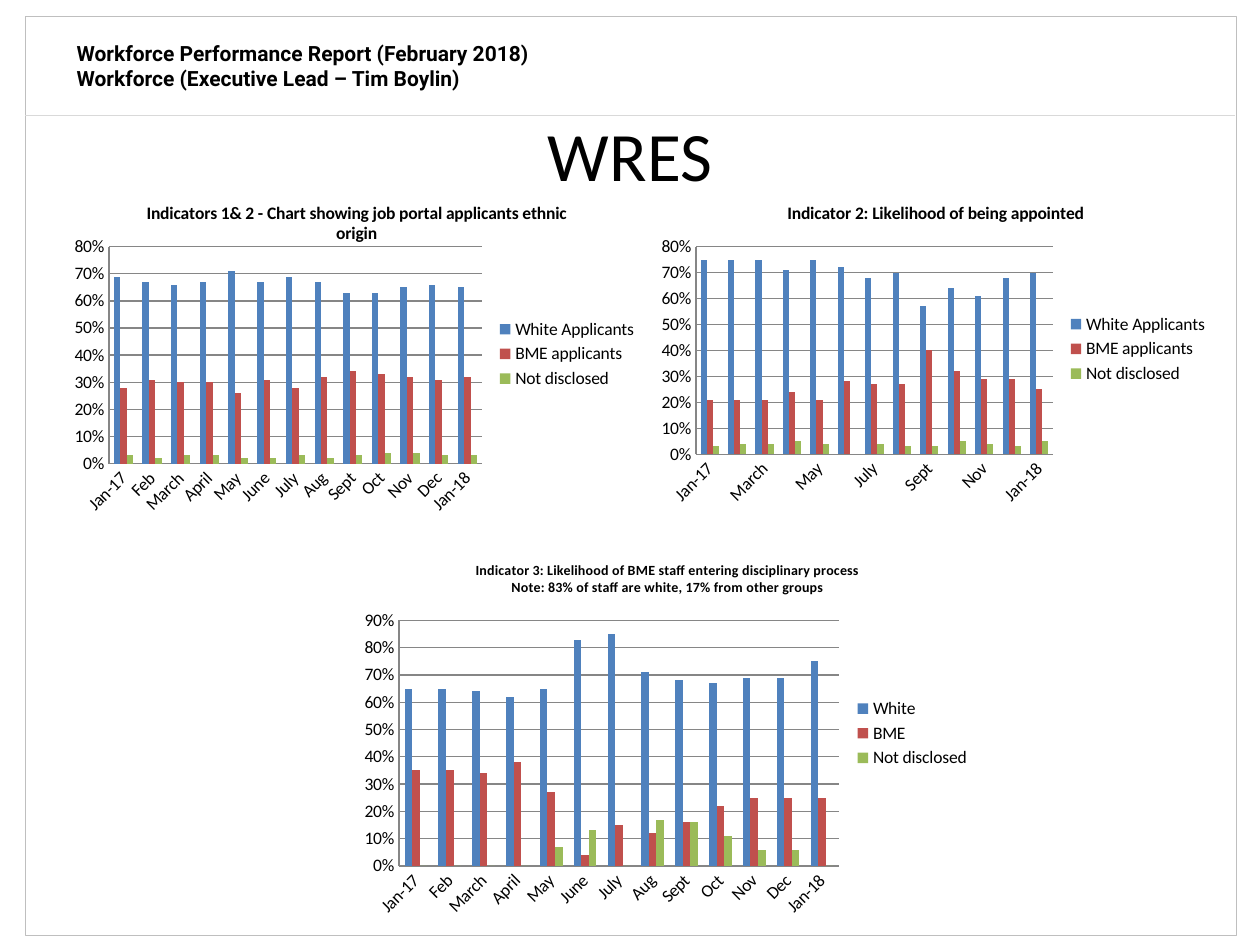
"""Build the WRES slide of the workforce performance report."""
from lxml import etree
from pptx import Presentation
from pptx.chart.data import CategoryChartData
from pptx.dml.color import RGBColor
from pptx.enum import chart as charts, shapes, text
from pptx.oxml import ns
from pptx.util import Pt

BLACK = RGBColor(0, 0, 0)
FRAME = RGBColor(0xBF, 0xBF, 0xBF)
RULE = RGBColor(0xD9, 0xD9, 0xD9)
GRID = RGBColor(0x86, 0x86, 0x86)
SERIES_COLORS = [RGBColor(0x4F, 0x81, 0xBD), RGBColor(0xC0, 0x50, 0x4D), RGBColor(0x9B, 0xBB, 0x59)]

HEADER = "Workforce Performance Report (February 2018)\vWorkforce (Executive Lead – Tim Boylin)"
MONTHS = ["Jan-17", "Feb", "March", "April", "May", "June", "July",
          "Aug", "Sept", "Oct", "Nov", "Dec", "Jan-18"]
CHARTS = [
    {"title": ["Indicators 1& 2 - Chart showing job portal applicants ethnic origin"],
     "title_size": 10, "area": (36, 105.8, 335.5, 193), "plot": (62.3, 141, 213, 124),
     "top": 0.8, "skip": 1,
     "series": {
         "White Applicants": [0.69, 0.67, 0.66, 0.67, 0.71, 0.67, 0.69, 0.67, 0.63, 0.63, 0.65, 0.66, 0.65],
         "BME applicants": [0.28, 0.31, 0.3, 0.3, 0.26, 0.31, 0.28, 0.32, 0.34, 0.33, 0.32, 0.31, 0.32],
         "Not disclosed": [0.03, 0.02, 0.03, 0.03, 0.02, 0.02, 0.03, 0.02, 0.03, 0.04, 0.04, 0.03, 0.03]}},
    {"title": ["Indicator 2: Likelihood of being appointed"],
     "title_size": 10, "area": (371.5, 105.8, 326.2, 187.2), "plot": (397.7, 141, 204, 118.6),
     "top": 0.8, "skip": 2,
     "series": {
         "White Applicants": [0.75, 0.75, 0.75, 0.71, 0.75, 0.72, 0.68, 0.7, 0.57, 0.64, 0.61, 0.68, 0.7],
         "BME applicants": [0.21, 0.21, 0.21, 0.24, 0.21, 0.28, 0.27, 0.27, 0.4, 0.32, 0.29, 0.29, 0.25],
         "Not disclosed": [0.03, 0.04, 0.04, 0.05, 0.04, None, 0.04, 0.03, 0.03, 0.05, 0.04, 0.03, 0.05]}},
    {"title": ["Indicator 3: Likelihood of BME staff entering disciplinary process",
               "Note: 83% of staff are white, 17% from other groups"],
     "title_size": 8, "area": (201.6, 309.6, 360, 218.9), "plot": (228, 354.6, 251.4, 140.3),
     "top": 0.9, "skip": 1,
     "series": {
         "White": [0.65, 0.65, 0.64, 0.62, 0.65, 0.83, 0.85, 0.71, 0.68, 0.67, 0.69, 0.69, 0.75],
         "BME": [0.35, 0.35, 0.34, 0.38, 0.27, 0.04, 0.15, 0.12, 0.16, 0.22, 0.25, 0.25, 0.25],
         "Not disclosed": [0, 0, 0, 0, 0.07, 0.13, 0, 0.17, 0.16, 0.11, 0.06, 0.06, 0]}},
]


def set_font(font, name, size, bold=False):
    font.name, font.size, font.bold = name, Pt(size), bold
    font.color.rgb = BLACK


def set_line(line, color, width):
    line.color.rgb = color
    line.width = Pt(width)


def place_plot(chart, area, plot):
    plot_area = chart._chartSpace.chart.plotArea
    for old in plot_area.findall(ns.qn("c:layout")):
        plot_area.remove(old)
    layout = etree.Element(ns.qn("c:layout"))
    manual = etree.SubElement(layout, ns.qn("c:manualLayout"))
    left, top, width, height = area
    values = [("layoutTarget", "inner"), ("xMode", "edge"), ("yMode", "edge"),
              ("x", (plot[0] - left) / width), ("y", (plot[1] - top) / height),
              ("w", plot[2] / width), ("h", plot[3] / height)]
    for tag, value in values:
        etree.SubElement(manual, ns.qn("c:" + tag)).set("val", str(value))
    plot_area.insert(0, layout)


def format_axes(chart, top, skip):
    months, shares = chart.category_axis, chart.value_axis
    for axis in (months, shares):
        axis.major_tick_mark = axis.minor_tick_mark = charts.XL_TICK_MARK.NONE
        set_line(axis.format.line, GRID, 0.75)
        set_font(axis.tick_labels.font, "Calibri", 10)
    shares.minimum_scale, shares.maximum_scale, shares.major_unit = 0, top, 0.1
    shares.tick_labels.number_format = "0%"
    shares.tick_labels.number_format_is_linked = False
    shares.has_major_gridlines = True
    set_line(shares.major_gridlines.format.line, GRID, 0.75)
    element = months._element
    element.find(ns.qn("c:txPr")).find(ns.qn("a:bodyPr")).set("rot", "-2700000")
    label_skip = etree.Element(ns.qn("c:tickLblSkip"))
    label_skip.set("val", str(skip))
    element.find(ns.qn("c:noMultiLvlLbl")).addprevious(label_skip)


def add_column_chart(page, details):
    data = CategoryChartData(number_format="0%")
    data.categories = MONTHS
    for name, values in details["series"].items():
        data.add_series(name, values)
    area = details["area"]
    chart = page.shapes.add_chart(charts.XL_CHART_TYPE.COLUMN_CLUSTERED,
                                  *[Pt(length) for length in area], data).chart
    set_font(chart.font, "Calibri", 10)
    chart.has_title = True
    frame = chart.chart_title.text_frame
    for index, line in enumerate(details["title"]):
        para = frame.add_paragraph() if index else frame.paragraphs[0]
        para.text = line
        set_font(para.font, "Calibri", details["title_size"], True)
    chart.chart_title.include_in_layout = False
    chart.has_legend = True
    chart.legend.position = charts.XL_LEGEND_POSITION.RIGHT
    chart.legend.include_in_layout = False
    set_font(chart.legend.font, "Calibri", 10)
    columns = chart.plots[0]
    columns.gap_width, columns.overlap, columns.vary_by_categories = 150, 0, False
    for series, color in zip(columns.series, SERIES_COLORS):
        series.format.fill.solid()
        series.format.fill.fore_color.rgb = color
        series.invert_if_negative = False
    format_axes(chart, details["top"], details["skip"])
    place_plot(chart, area, details["plot"])


def add_header(page):
    box = page.shapes.add_textbox(Pt(36.7), Pt(19.4), Pt(360), Pt(36))
    box.text_frame.word_wrap = True
    para = box.text_frame.paragraphs[0]
    para.text = HEADER
    set_font(para.font, "Roboto", 12, True)
    border = page.shapes.add_shape(shapes.MSO_SHAPE.RECTANGLE, Pt(14.4), Pt(9.4), Pt(691.9), Pt(524.9))
    border.shadow.inherit = False
    border.fill.background()
    set_line(border.line, FRAME, 0.25)
    rule = page.shapes.add_connector(shapes.MSO_CONNECTOR.STRAIGHT, Pt(14.4), Pt(66), Pt(705.6), Pt(66))
    set_line(rule.line, RULE, 0.75)
    etree.SubElement(rule._element.spPr, ns.qn("a:effectLst"))


def format_title(title):
    title.left, title.top, title.width, title.height = Pt(36), Pt(64), Pt(648), Pt(48)
    frame = title.text_frame
    frame.margin_top = frame.margin_bottom = 0
    frame.vertical_anchor = text.MSO_ANCHOR.MIDDLE
    para = frame.paragraphs[0]
    para.text = "WRES"
    para.alignment = text.PP_ALIGN.CENTER
    set_font(para.font, "Calibri", 39.6)


def main():
    deck = Presentation()
    deck.slide_width, deck.slide_height = Pt(720), Pt(540)
    page = deck.slides.add_slide(deck.slide_layouts[5])
    add_header(page)
    format_title(page.shapes.title)
    for details in CHARTS:
        add_column_chart(page, details)
    deck.save("out.pptx")


if __name__ == "__main__":
    main()
